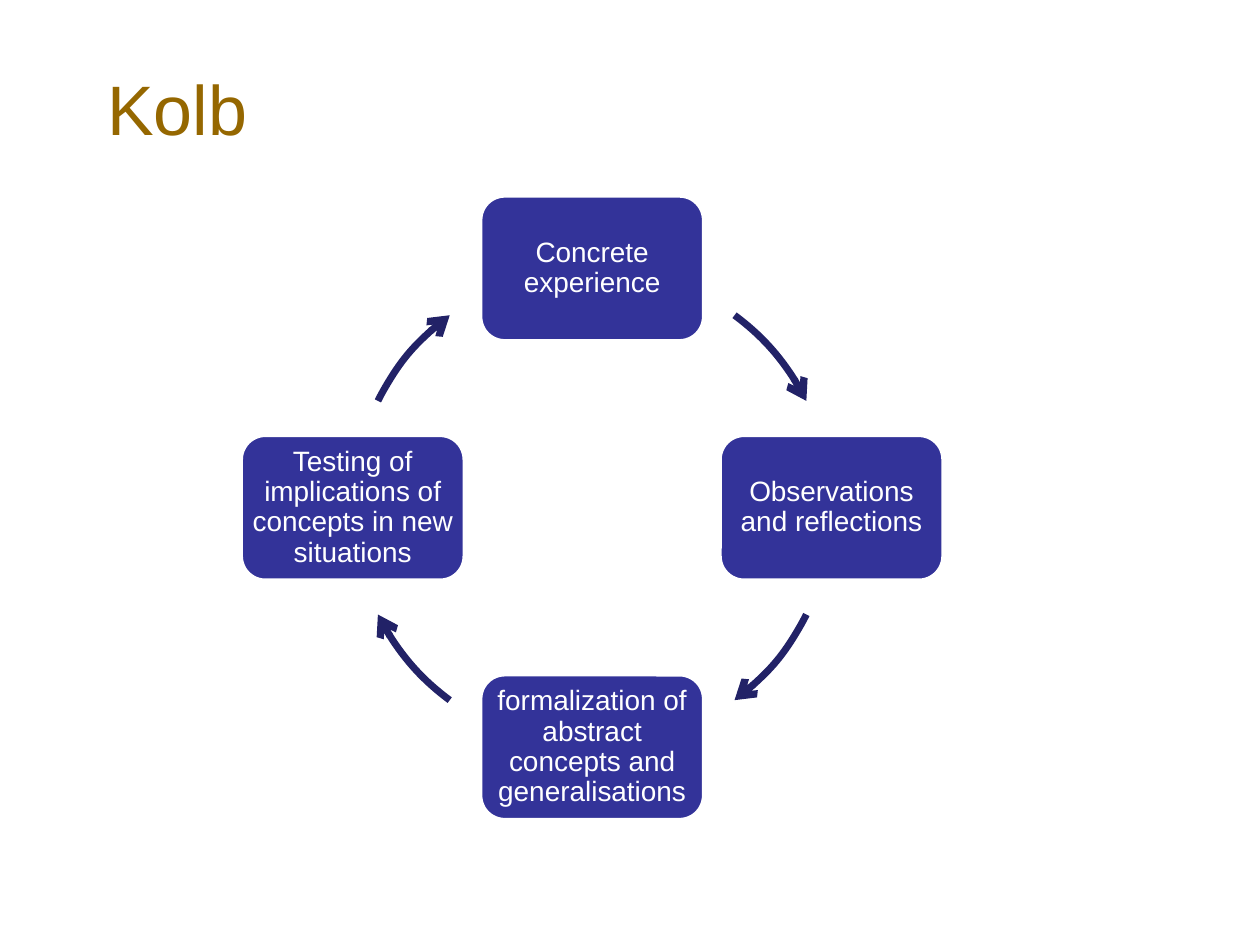
from math import cos, radians, sin

from lxml.etree import SubElement
from pptx import Presentation
from pptx.dml.color import RGBColor
from pptx.enum.shapes import MSO_SHAPE as Shape
from pptx.enum.text import MSO_ANCHOR as Anchor, PP_ALIGN as Align
from pptx.oxml.ns import qn
from pptx.util import Inches, Pt

CENTER_X, CENTER_Y, RADIUS = 4.7, 4.03, 1.9
BOX_WIDTH, BOX_HEIGHT = 1.77, 1.15
STAGES = [
    "Concrete experience",
    "Observations and reflections",
    "formalization of abstract concepts and generalisations",
    "Testing of implications of concepts in new situations",
]
# Start and end of each arrow, in degrees clockwise from the right
ARROW_ANGLES = [(306.5, 333.5), (26.5, 53.5), (126.5, 153.5), (206.5, 233.5)]


def color(hex_value):
    return RGBColor.from_string(hex_value)


def set_attributes(target, values):
    for name, value in values.items():
        setattr(target, name, value)


def write_text(shape, text, size, hex_color, frame_format, paragraph_format):
    frame = shape.text_frame
    frame.text = text
    set_attributes(frame, {"word_wrap": True, **frame_format})
    paragraph = frame.paragraphs[0]
    set_attributes(paragraph, paragraph_format)
    set_attributes(paragraph.font, {"name": "Arial", "size": Pt(size)})
    paragraph.font.color.rgb = color(hex_color)


def set_line(shape, hex_color, width):
    shape.line.color.rgb = color(hex_color)
    shape.line.width = Pt(width)


def add_title(slide, text):
    title = slide.shapes.title
    set_attributes(title, {"left": Inches(0.75), "top": Inches(0.42),
                           "width": Inches(8.5), "height": Inches(1)})
    write_text(title, text, 40, "956700",
               {"vertical_anchor": Anchor.TOP, "margin_top": Inches(0.1)},
               {"alignment": Align.LEFT})


def add_stage(slide, text, angle):
    """Add a box centred on the cycle at the given angle."""
    left = CENTER_X + RADIUS * cos(radians(angle)) - BOX_WIDTH / 2
    top = CENTER_Y + RADIUS * sin(radians(angle)) - BOX_HEIGHT / 2
    box = slide.shapes.add_shape(Shape.ROUNDED_RECTANGLE, Inches(left), Inches(top),
                                 Inches(BOX_WIDTH), Inches(BOX_HEIGHT))
    box.shadow.inherit = False
    box.fill.solid()
    box.fill.fore_color.rgb = color("333399")
    set_line(box, "FFFFFF", 2)
    sides = ("left", "right", "top", "bottom")
    margins = {f"margin_{side}": Inches(0.01) for side in sides}
    write_text(box, text, 16, "FFFFFF",
               {"vertical_anchor": Anchor.MIDDLE, **margins},
               {"alignment": Align.CENTER, "line_spacing": 0.9})


def add_arc_arrow(slide, start, end):
    arc = slide.shapes.add_shape(Shape.ARC, Inches(CENTER_X - RADIUS),
                                 Inches(CENTER_Y - RADIUS),
                                 Inches(2 * RADIUS), Inches(2 * RADIUS))
    arc.shadow.inherit = False
    arc.fill.background()
    # Angles are stored in 60000ths of a degree, adjustments in 100000ths
    for index, angle in enumerate((start, end)):
        arc.adjustments[index] = angle * 0.6
    set_line(arc, "222267", 4)
    line = arc.line._get_or_add_ln()
    SubElement(line, qn("a:tailEnd"), type="arrow")


def main():
    presentation = Presentation()
    presentation.slide_width = Inches(10)
    presentation.slide_height = Inches(7.5)
    slide = presentation.slides.add_slide(presentation.slide_layouts[5])
    add_title(slide, "Kolb")
    for index, (text, angles) in enumerate(zip(STAGES, ARROW_ANGLES)):
        add_stage(slide, text, 90 * index - 90)
        add_arc_arrow(slide, *angles)
    presentation.save("out.pptx")


if __name__ == "__main__":
    main()
